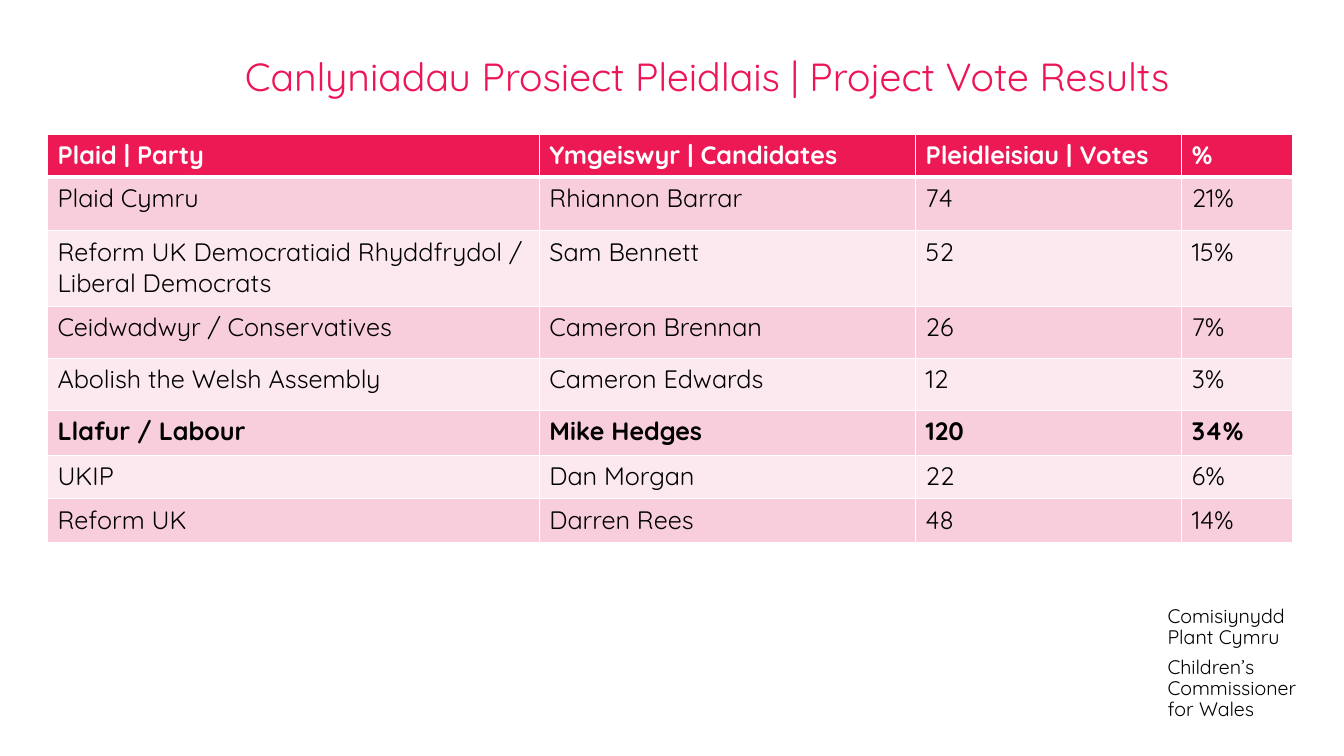
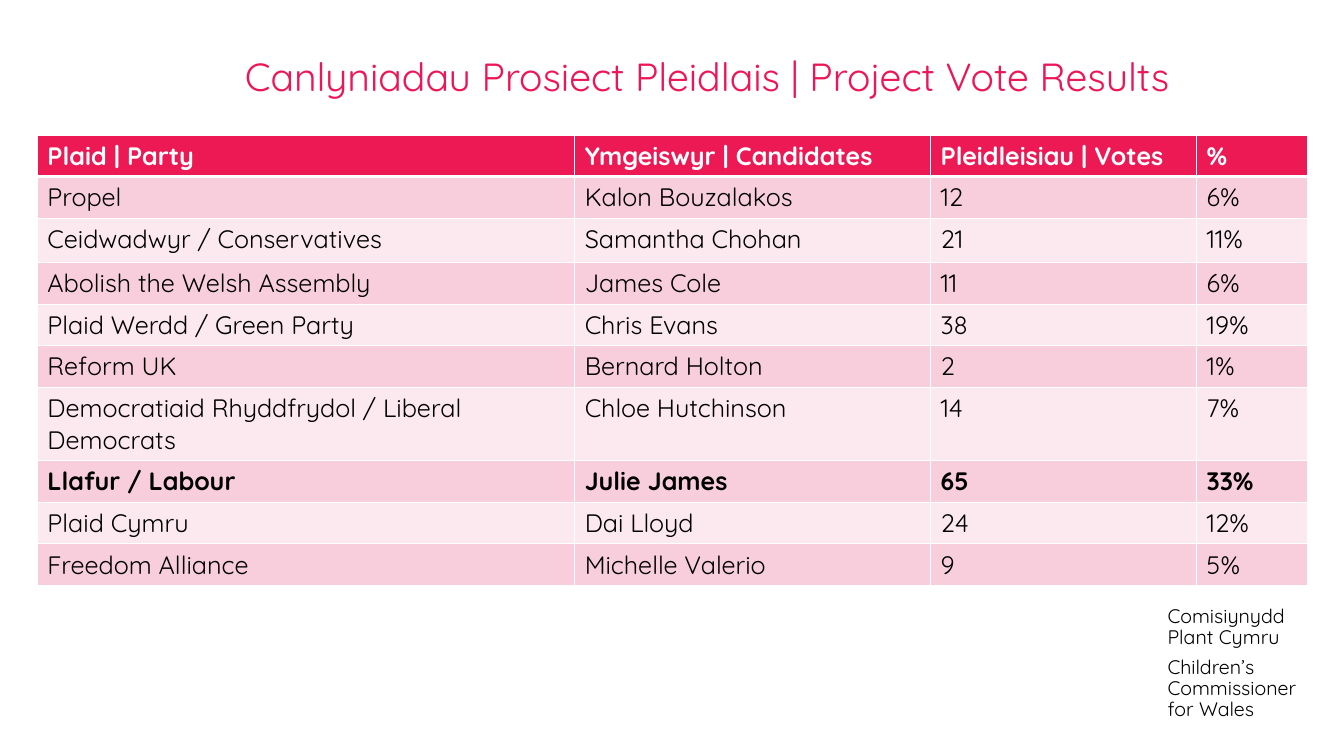
from dataclasses import dataclass

from lxml import etree
from pptx import Presentation
from pptx.dml.color import RGBColor
from pptx.enum.text import MSO_ANCHOR, PP_ALIGN
from pptx.oxml.ns import qn
from pptx.slide import Slide
from pptx.table import _Cell
from pptx.text.text import TextFrame, _Paragraph
from pptx.util import Inches, Pt

TOP, MIDDLE = MSO_ANCHOR.TOP, MSO_ANCHOR.MIDDLE
LEFT = PP_ALIGN.LEFT

SLIDE_W, SLIDE_H = Inches(13.33), Inches(7.5)
FONT = "Quicksand"
TITLE_PINK = RGBColor(0xED, 0x15, 0x56)
HEADER_PINK = RGBColor(0xEC, 0x19, 0x55)
BAND_DARK = RGBColor(0xF8, 0xCE, 0xDD)
BAND_LIGHT = RGBColor(0xFC, 0xE8, 0xEF)
BLACK = RGBColor(0, 0, 0)
WHITE = RGBColor(0xFF, 0xFF, 0xFF)

TITLE = "Canlyniadau Prosiect Pleidlais | Project Vote Results"
FOOTER = ("Comisiynydd\vPlant Cymru", "Children’s\vCommissioner\vfor Wales")
HEADINGS = ("Plaid | Party", "Ymgeiswyr | Candidates", "Pleidleisiau | Votes", "%")


@dataclass(frozen=True)
class Box:
    """A frame in percent of the slide's width and height."""
    left: float
    top: float
    width: float
    height: float


@dataclass(frozen=True)
class Result:
    party: str
    candidate: str
    votes: int
    percent: int
    height: float = 5.5  # percent of the slide's height

    def cells(self) -> tuple[str, ...]:
        return self.party, self.candidate, str(self.votes), f"{self.percent}%"


@dataclass(frozen=True)
class Poll:
    """One results table, with its lengths in percent of the slide."""
    left: float
    top: float
    columns: tuple[float, ...]
    header_height: float
    results: tuple[Result, ...]


TITLE_BOX = Box(18.23, 7.6, 70.6, 10.13)
FOOTER_BOX = Box(86.87, 80.13, 10.35, 15.33)

POLLS = (
    Poll(3.53, 17.73, (36.6, 28, 19.8, 8.25), 5.73, (
        Result("Plaid Cymru", "Rhiannon Barrar", 74, 21, 7.07),
        Result("Reform UK Democratiaid Rhyddfrydol / Liberal Democrats",
               "Sam Bennett", 52, 15, 10),
        Result("Ceidwadwyr / Conservatives", "Cameron Brennan", 26, 7, 6.93),
        Result("Abolish the Welsh Assembly", "Cameron Edwards", 12, 3, 6.8),
        Result("Llafur / Labour", "Mike Hedges", 120, 34, 6),
        Result("UKIP", "Dan Morgan", 22, 6, 5.73),
        Result("Reform UK", "Darren Rees", 48, 14, 5.73),
    )),
    Poll(2.78, 17.87, (39.98, 26.48, 19.8, 8.25), 5.5, (
        Result("Propel", "Kalon Bouzalakos", 12, 6),
        Result("Ceidwadwyr / Conservatives", "Samantha Chohan", 21, 11, 5.87),
        Result("Abolish the Welsh Assembly", "James Cole", 11, 6),
        Result("Plaid Werdd / Green Party", "Chris Evans", 38, 19),
        Result("Reform UK", "Bernard Holton", 2, 1),
        Result("Democratiaid Rhyddfrydol / Liberal Democrats",
               "Chloe Hutchinson", 14, 7, 9.73),
        Result("Llafur / Labour", "Julie James", 65, 33),
        Result("Plaid Cymru", "Dai Lloyd", 24, 12),
        Result("Freedom Alliance", "Michelle Valerio", 9, 5),
    )),
)


def across(percent: float) -> int:
    return round(SLIDE_W * percent / 100)


def down(percent: float) -> int:
    return round(SLIDE_H * percent / 100)


def style(p: _Paragraph, size: float, color: RGBColor, bold: bool = False) -> None:
    p.alignment = LEFT
    for r in p.runs:
        r.font.name = FONT
        r.font.size = Pt(size)
        r.font.bold = bold
        r.font.color.rgb = color


def add_text(s: Slide, box: Box, lines: tuple[str, ...], size: float,
             color: RGBColor, anchor: MSO_ANCHOR) -> TextFrame:
    tf = s.shapes.add_textbox(across(box.left), down(box.top),
                              across(box.width), down(box.height)).text_frame
    tf.word_wrap = True
    tf.vertical_anchor = anchor
    tf.margin_left = tf.margin_right = tf.margin_top = tf.margin_bottom = 0
    for i, line in enumerate(lines):
        p = tf.add_paragraph() if i else tf.paragraphs[0]
        p.text = line
        p.line_spacing = 0.9
        style(p, size, color)
    return tf


def set_borders(cell: _Cell, top: float, bottom: float) -> None:
    """Draw white borders, one point wide at the sides; call before filling."""
    tc_pr = cell._tc.get_or_add_tcPr()
    for side, width in (("L", 1), ("R", 1), ("T", top), ("B", bottom)):
        ln = etree.SubElement(tc_pr, qn(f"a:ln{side}"), w=str(Pt(width)))
        fill = etree.SubElement(ln, qn("a:solidFill"))
        etree.SubElement(fill, qn("a:srgbClr"), val=str(WHITE))


def add_results(s: Slide, poll: Poll) -> None:
    rows = [HEADINGS, *(result.cells() for result in poll.results)]
    heights = [poll.header_height, *(result.height for result in poll.results)]
    most_votes = max(result.votes for result in poll.results)
    table = s.shapes.add_table(
        len(rows), len(HEADINGS), across(poll.left), down(poll.top),
        across(sum(poll.columns)), down(sum(heights))).table
    for column, width in zip(table.columns, poll.columns):
        column.width = across(width)

    for i, (texts, height) in enumerate(zip(rows, heights)):
        table.rows[i].height = down(height)
        header = i == 0
        bold = header or poll.results[i - 1].votes == most_votes
        band = HEADER_PINK if header else BAND_DARK if i % 2 else BAND_LIGHT
        for j, text in enumerate(texts):
            cell = table.cell(i, j)
            set_borders(cell, top=3 if i == 1 else 1, bottom=3 if header else 1)
            cell.fill.solid()
            cell.fill.fore_color.rgb = band
            cell.text_frame.text = text
            style(cell.text_frame.paragraphs[0], 18, WHITE if header else BLACK, bold)


def main() -> None:
    prs = Presentation()
    prs.slide_width, prs.slide_height = SLIDE_W, SLIDE_H
    for poll in POLLS:
        s = prs.slides.add_slide(prs.slide_layouts[6])
        footer = add_text(s, FOOTER_BOX, FOOTER, 14, BLACK, MIDDLE)
        footer.paragraphs[0].space_after = Pt(6)
        add_text(s, TITLE_BOX, (TITLE,), 28, TITLE_PINK, TOP)
        add_results(s, poll)
    prs.save("out.pptx")


if __name__ == "__main__":
    main()
